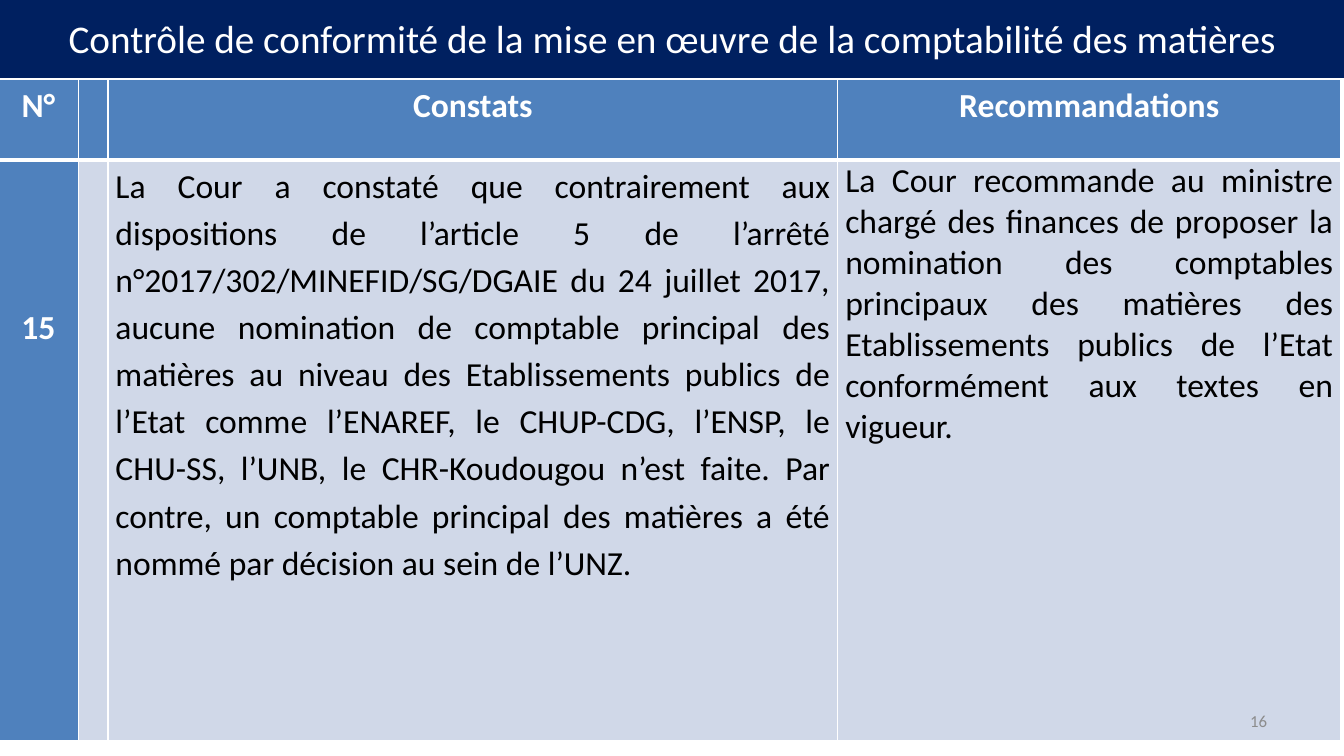
"""Build the slide on compliance of the stores accounting, with findings and recommendations."""
from dataclasses import dataclass

from lxml.etree import SubElement
from pptx import Presentation
from pptx.dml.color import RGBColor
from pptx.enum.text import MSO_ANCHOR, PP_ALIGN
from pptx.oxml.ns import qn
from pptx.slide import Slide
from pptx.table import _Cell
from pptx.text.text import TextFrame
from pptx.util import Pt


@dataclass(frozen=True)
class Theme:
    font: str = "Calibri"
    navy: str = "002060"
    blue: str = "4F81BD"
    pale: str = "D0D8E8"
    white: str = "FFFFFF"
    black: str = "000000"
    grey: str = "8C8C8C"
    title_size: float = 28
    table_size: float = 24
    number_size: float = 12


@dataclass(frozen=True)
class Style:
    size: float
    color: str
    align: PP_ALIGN = PP_ALIGN.CENTER
    bold: bool = False
    spacing: float = 1.0


@dataclass(frozen=True)
class Entry:
    text: str
    fill: str
    style: Style
    top_margin: float = 0


THEME = Theme()
SLIDE_WIDTH, SLIDE_HEIGHT = 960, 540
COLUMN_WIDTHS = (57.6, 20.9, 521.3, 359.3)
ROW_HEIGHTS = (57.6, 414.7)
THIN, THICK = 1, 3
HEADING = Style(THEME.table_size, THEME.white, bold=True, spacing=1.15)
FINDING = Style(THEME.table_size, THEME.black, PP_ALIGN.JUSTIFY, spacing=1.15)
ADVICE = Style(THEME.table_size, THEME.black, PP_ALIGN.JUSTIFY)
TITLE = "Contrôle de conformité de la mise en œuvre de la comptabilité des matières"
ROWS = (
    tuple(Entry(label, THEME.blue, HEADING) for label in ("N°", "", "Constats", "Recommandations")),
    (
        Entry("15", THEME.blue, HEADING, top_margin=101),
        Entry("", THEME.pale, FINDING),
        Entry(
            "La Cour a constaté que contrairement aux dispositions de l’article 5 de l’arrêté "
            "n°2017/302/MINEFID/SG/DGAIE du 24 juillet 2017, aucune nomination de comptable "
            "principal des matières au niveau des Etablissements publics de l’Etat comme "
            "l’ENAREF, le CHUP-CDG, l’ENSP, le CHU-SS, l’UNB, le CHR-Koudougou n’est faite. "
            "Par contre, un comptable principal des matières a été nommé par décision au sein "
            "de l’UNZ.",
            THEME.pale, FINDING,
        ),
        Entry(
            "La Cour recommande au ministre chargé des finances de proposer la nomination des "
            "comptables principaux des matières des Etablissements publics de l’Etat "
            "conformément aux textes en vigueur.",
            THEME.pale, ADVICE,
        ),
    ),
)


def write(frame: TextFrame, text: str, style: Style) -> None:
    frame.text = text
    paragraph = frame.paragraphs[0]
    paragraph.alignment = style.align
    paragraph.line_spacing = style.spacing
    formats = {"name": THEME.font, "size": Pt(style.size), "bold": style.bold}
    for font in (paragraph.font, *(run.font for run in paragraph.runs)):
        for attribute, value in formats.items():
            setattr(font, attribute, value)
        font.color.rgb = RGBColor.from_string(style.color)


def draw_borders(cell: _Cell, top: float, bottom: float) -> None:
    properties = cell._tc.get_or_add_tcPr()
    widths = {"a:lnL": THIN, "a:lnR": THIN, "a:lnT": top, "a:lnB": bottom}
    for position, (side, width) in enumerate(widths.items()):
        border = SubElement(properties, qn(side), w=str(Pt(width)))
        SubElement(SubElement(border, qn("a:solidFill")), qn("a:srgbClr"), val=THEME.white)
        properties.insert(position, border)


def fill_cell(cell: _Cell, entry: Entry) -> None:
    margins = {"margin_left": 5.4, "margin_right": 5.4, "margin_top": entry.top_margin, "margin_bottom": 0}
    for attribute, value in margins.items():
        setattr(cell, attribute, Pt(value))
    cell.fill.solid()
    cell.fill.fore_color.rgb = RGBColor.from_string(entry.fill)
    write(cell.text_frame, entry.text, entry.style)


def add_title(slide: Slide) -> None:
    title = slide.shapes.title
    box = {"left": 0, "top": 0, "width": SLIDE_WIDTH, "height": 54.7}
    for attribute, value in box.items():
        setattr(title, attribute, Pt(value))
    title.fill.solid()
    for color in (title.fill.fore_color, title.line.color):
        color.rgb = RGBColor.from_string(THEME.navy)
    title.line.width = Pt(2)
    title.text_frame.vertical_anchor = MSO_ANCHOR.MIDDLE
    write(title.text_frame, TITLE, Style(THEME.title_size, THEME.white))


def add_findings(slide: Slide) -> None:
    findings = slide.shapes.add_table(
        len(ROWS), len(COLUMN_WIDTHS), Pt(-1.4), Pt(56.9), Pt(sum(COLUMN_WIDTHS)), Pt(sum(ROW_HEIGHTS))
    ).table
    for column, width in zip(findings.columns, COLUMN_WIDTHS):
        column.width = Pt(width)
    edges = ((THIN, THICK), (THICK, THIN))
    for row, height, entries, (top, bottom) in zip(findings.rows, ROW_HEIGHTS, ROWS, edges):
        row.height = Pt(height)
        for cell, entry in zip(row.cells, entries):
            fill_cell(cell, entry)
            draw_borders(cell, top, bottom)


def add_page_number(slide: Slide) -> None:
    frame = slide.shapes.add_textbox(Pt(688.3), Pt(500.4), Pt(223.9), Pt(28.8)).text_frame
    frame.word_wrap = True
    frame.vertical_anchor = MSO_ANCHOR.MIDDLE
    write(frame, "16", Style(THEME.number_size, THEME.grey, PP_ALIGN.RIGHT))


def main() -> None:
    presentation = Presentation()
    presentation.slide_width = Pt(SLIDE_WIDTH)
    presentation.slide_height = Pt(SLIDE_HEIGHT)
    slide = presentation.slides.add_slide(presentation.slide_layouts.get_by_name("Title Only"))
    add_title(slide)
    add_findings(slide)
    add_page_number(slide)
    presentation.save("out.pptx")


if __name__ == "__main__":
    main()
